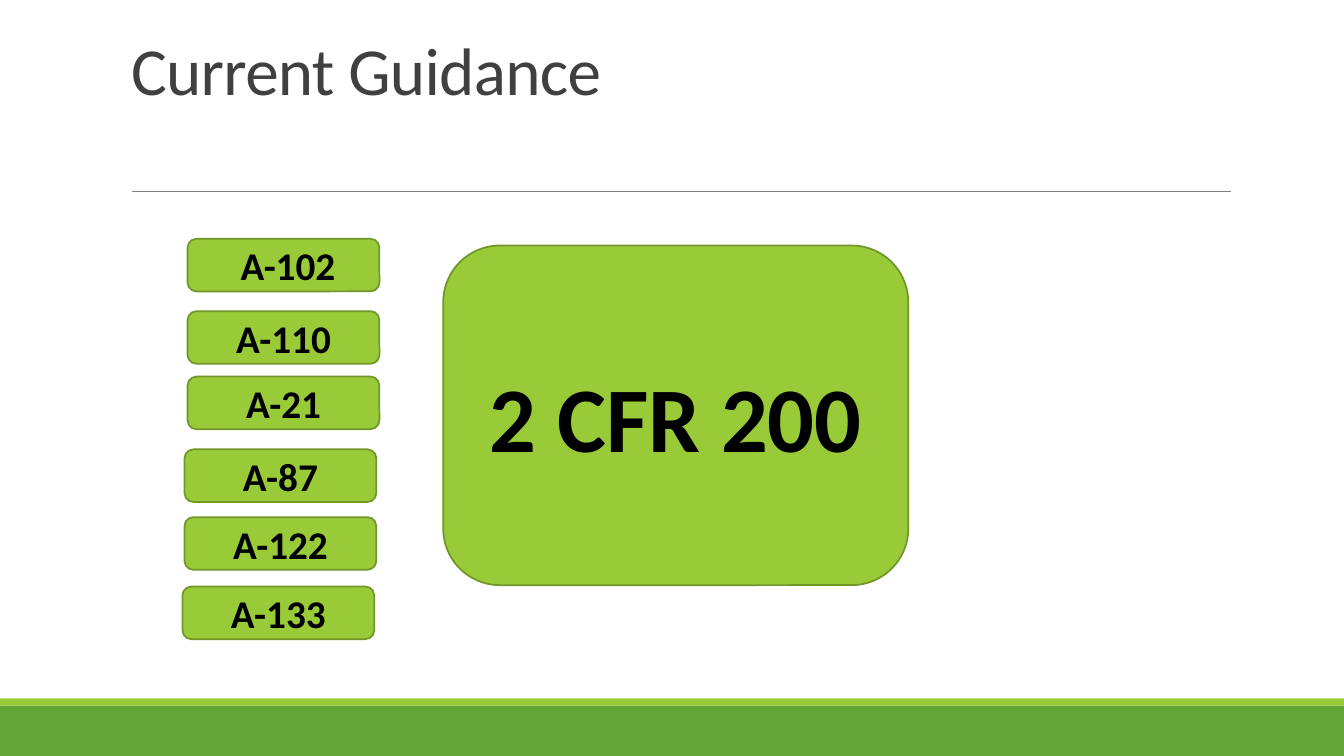
from dataclasses import dataclass

from lxml.etree import SubElement
from pptx import Presentation
from pptx.dml.color import RGBColor
from pptx.enum.shapes import MSO_CONNECTOR, MSO_SHAPE
from pptx.enum.text import MSO_ANCHOR, MSO_AUTO_SIZE, PP_ALIGN
from pptx.oxml.ns import qn
from pptx.shapes.autoshape import Shape
from pptx.slide import Slide
from pptx.text.text import TextFrame
from pptx.util import Pt

COLORS = {
    "band": "63A537",
    "accent": "99CB38",
    "outline": "719629",
    "rule": "808080",
    "title": "404040",
    "label": "000000",
}
SLIDE_WIDTH, SLIDE_HEIGHT = 960, 540
CIRCULAR_WIDTH, CIRCULAR_HEIGHT = 137, 37.6


@dataclass(frozen=True)
class Box:
    left: float
    top: float
    width: float
    height: float


@dataclass(frozen=True)
class Circular:
    label: str
    left: float
    top: float


CIRCULARS = [
    Circular(" A-102", 134, 170.6),
    Circular("A-110", 134, 222.3),
    Circular("A-21", 134, 269),
    Circular("A-87", 131.8, 321),
    Circular("A-122", 131.8, 369.4),
    Circular("A-133", 130.3, 419),
]


def color(name: str) -> RGBColor:
    return RGBColor.from_string(COLORS[name])


def write_text(frame: TextFrame, text: str, *, size: float, color_name: str,
               bold: bool = False, align: PP_ALIGN = PP_ALIGN.CENTER,
               anchor: MSO_ANCHOR = MSO_ANCHOR.MIDDLE,
               line_spacing: float = 1.0, tracking: float = 0) -> None:
    frame.word_wrap = True
    frame.auto_size = MSO_AUTO_SIZE.NONE
    frame.vertical_anchor = anchor
    paragraph = frame.paragraphs[0]
    paragraph.alignment = align
    paragraph.line_spacing = line_spacing
    run = paragraph.add_run()
    run.text = text
    run.font.name = "Calibri"
    run.font.size = Pt(size)
    run.font.bold = bold
    run.font.color.rgb = color(color_name)
    if tracking:
        run._r.get_or_add_rPr().set("spc", str(round(tracking * 100)))


def add_box(slide: Slide, box: Box, fill: str, *,
            kind: MSO_SHAPE = MSO_SHAPE.RECTANGLE, outlined: bool = False) -> Shape:
    shape = slide.shapes.add_shape(
        kind, Pt(box.left), Pt(box.top), Pt(box.width), Pt(box.height))
    shape.shadow.inherit = False
    shape.fill.solid()
    shape.fill.fore_color.rgb = color(fill)
    if outlined:
        shape.line.color.rgb = color("outline")
        shape.line.width = Pt(1.25)
    else:
        shape.line.fill.background()
    return shape


def add_label(slide: Slide, box: Box, text: str, size: float) -> None:
    shape = add_box(slide, box, "accent", kind=MSO_SHAPE.ROUNDED_RECTANGLE, outlined=True)
    write_text(shape.text_frame, text, size=size, color_name="label", bold=True)


def add_title(slide: Slide, text: str) -> None:
    title = slide.shapes.title
    title.left, title.top, title.width, title.height = Pt(86.4), Pt(22.3), Pt(792), Pt(114.5)
    title.text_frame.margin_top = Pt(7)
    write_text(title.text_frame, text, size=48, color_name="title", align=PP_ALIGN.LEFT,
               anchor=MSO_ANCHOR.TOP, line_spacing=0.85, tracking=-0.5)


def add_rule(slide: Slide) -> None:
    rule = slide.shapes.add_connector(
        MSO_CONNECTOR.STRAIGHT, Pt(94.3), Pt(136.8), Pt(879), Pt(136.8))
    rule.line.color.rgb = color("rule")
    rule.line.width = Pt(0.5)
    SubElement(rule._element.spPr, qn("a:effectLst"))


def main() -> None:
    presentation = Presentation()
    presentation.slide_width, presentation.slide_height = Pt(SLIDE_WIDTH), Pt(SLIDE_HEIGHT)
    slide = presentation.slides.add_slide(presentation.slide_layouts[5])
    add_box(slide, Box(0, 504, SLIDE_WIDTH, 36), "band")
    add_box(slide, Box(0, 498.8, SLIDE_WIDTH, 5.2), "accent")
    add_rule(slide)
    add_title(slide, "Current Guidance")
    for circular in CIRCULARS:
        box = Box(circular.left, circular.top, CIRCULAR_WIDTH, CIRCULAR_HEIGHT)
        add_label(slide, box, circular.label, 28)
    add_label(slide, Box(316.6, 175.4, 332.2, 242.6), "2 CFR 200", 66)
    presentation.save("out.pptx")


if __name__ == "__main__":
    main()
